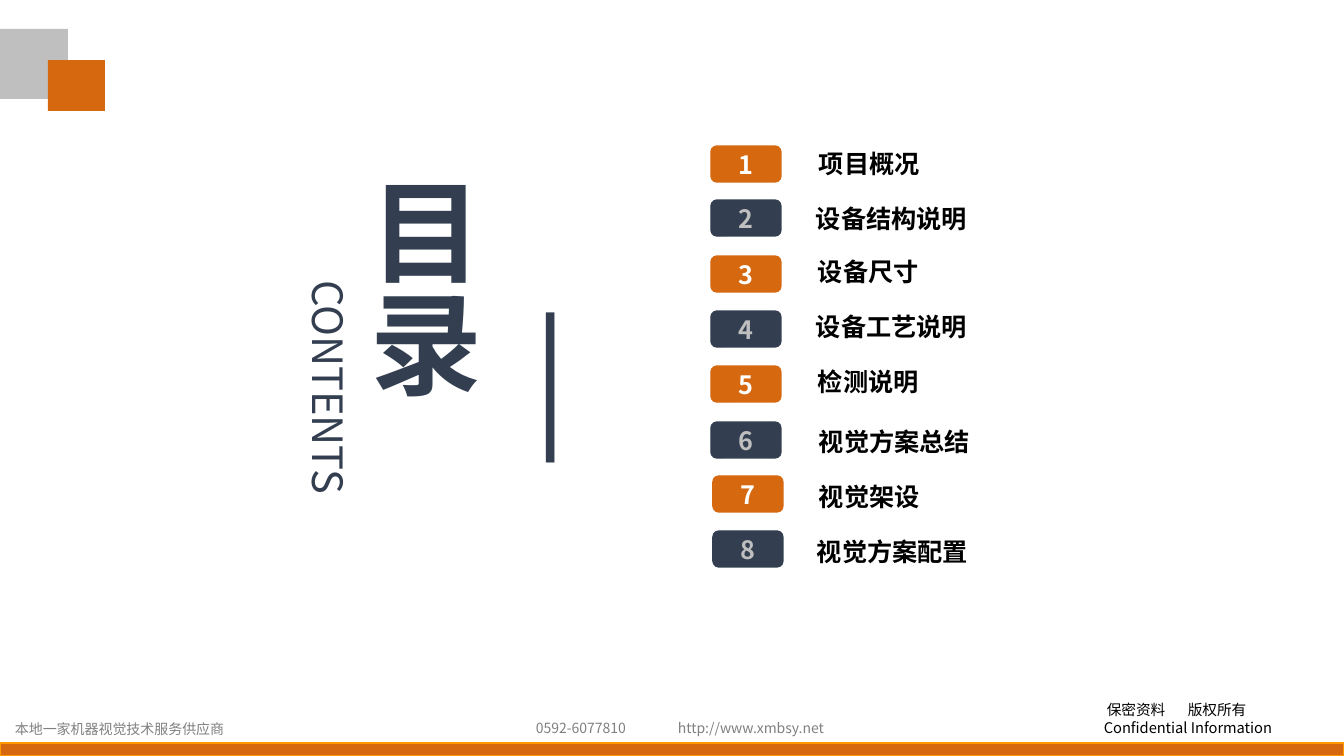
from dataclasses import dataclass

from lxml import etree
from pptx import Presentation
from pptx import util as u
from pptx.dml.color import RGBColor
from pptx.enum import shapes, text
from pptx.oxml.ns import qn

FONT = "Noto Sans CJK SC"
ORANGE, NAVY, SILVER = "D6680F", "333F50", "BFBFBF"
GREY, AMBER, WHITE, BLACK = "808080", "FF9900", "FFFFFF", "000000"
PX_PER_INCH = 100.8
BADGE_WIDTH, BADGE_HEIGHT = 70, 36


@dataclass
class Block:
    left: int
    top: int
    width: int
    height: int
    fill: str
    line: str = ""


@dataclass
class Caption:
    words: str
    left: int
    top: int
    width: int
    height: int
    size: float
    color: str
    bold: bool = False


@dataclass
class AgendaItem:
    words: str
    badge_left: int
    badge_top: int
    label_left: int
    label_top: int


BLOCKS = [
    Block(0, 743, 1344, 13, ORANGE, AMBER),
    Block(-1, 29, 69, 70, SILVER),
    Block(48, 60, 57, 51, ORANGE),
]

FOOTERS = [
    Caption("http://www.xmbsy.net", 668, 715, 168, 27, 10, GREY),
    Caption("0592-6077810", 526, 715, 111, 27, 10, GREY),
    Caption("本地一家机器视觉技术服务供应商", 5, 716, 237, 27, 10, GREY),
]

AGENDA = [
    AgendaItem("项目概况", 711, 146, 809, 143),
    AgendaItem("设备结构说明", 711, 200, 806, 198),
    AgendaItem("设备尺寸", 711, 256, 808, 251),
    AgendaItem("设备工艺说明", 711, 311, 806, 306),
    AgendaItem("检测说明", 711, 366, 808, 361),
    AgendaItem("视觉方案总结", 711, 422, 809, 421),
    AgendaItem("视觉架设", 713, 476, 809, 476),
    AgendaItem("视觉方案配置", 713, 531, 807, 531),
]


def px(length: int) -> u.Emu:
    return u.Emu(round(length * 914400 / PX_PER_INCH))


def rgb(value: str) -> RGBColor:
    return RGBColor.from_string(value)


def format_runs(text_frame, size: float, color: str, bold: bool = False) -> None:
    for paragraph in text_frame.paragraphs:
        for run in paragraph.runs:
            run.font.size = u.Pt(size)
            run.font.bold = bold
            run.font.color.rgb = rgb(color)
            run.font.name = FONT
            east_asian = etree.SubElement(run.font._element, qn("a:ea"))
            east_asian.set("typeface", FONT)


def clear_margins(text_frame) -> None:
    text_frame.margin_left = text_frame.margin_right = 0
    text_frame.margin_top = text_frame.margin_bottom = 0


def add_block(slide, block: Block, kind=shapes.MSO_SHAPE.RECTANGLE):
    shape = slide.shapes.add_shape(
        kind, px(block.left), px(block.top), px(block.width), px(block.height))
    shape.shadow.inherit = False
    shape.fill.solid()
    shape.fill.fore_color.rgb = rgb(block.fill)
    if block.line:
        shape.line.color.rgb = rgb(block.line)
        shape.line.width = u.Pt(1)
    else:
        shape.line.fill.background()
    return shape


def add_caption(slide, caption: Caption):
    shape = slide.shapes.add_textbox(
        px(caption.left), px(caption.top), px(caption.width), px(caption.height))
    shape.text_frame.word_wrap = True
    shape.text_frame.text = caption.words
    format_runs(shape.text_frame, caption.size, caption.color, caption.bold)
    return shape


def add_heading(slide) -> None:
    # Vertical title
    title = slide.shapes.title
    title.left, title.top, title.width, title.height = px(355), px(176), px(135), px(395)
    frame = title.text_frame
    frame.text = "目录"
    frame.auto_size = text.MSO_AUTO_SIZE.NONE
    frame.vertical_anchor = text.MSO_ANCHOR.MIDDLE
    clear_margins(frame)
    frame._txBody.bodyPr.set("vert", "eaVert")
    frame.paragraphs[0].alignment = text.PP_ALIGN.LEFT
    format_runs(frame, 80, NAVY, True)

    # Turned subtitle
    subtitle = add_caption(slide, Caption("CONTENTS", 157, 362, 344, 50, 29.8, NAVY))
    subtitle.rotation = 90
    clear_margins(subtitle.text_frame)
    subtitle.text_frame.paragraphs[0].alignment = text.PP_ALIGN.CENTER

    # Upright bar
    bar = add_caption(slide, Caption("|", 523, 286, 51, 173, 96, NAVY))
    bar.text_frame.word_wrap = False
    bar.text_frame.auto_size = text.MSO_AUTO_SIZE.SHAPE_TO_FIT_TEXT


def add_agenda_item(slide, number: int, item: AgendaItem) -> None:
    fill, color = (ORANGE, WHITE) if number % 2 else (NAVY, SILVER)
    badge = add_block(
        slide,
        Block(item.badge_left, item.badge_top, BADGE_WIDTH, BADGE_HEIGHT, fill, fill),
        shapes.MSO_SHAPE.ROUNDED_RECTANGLE)
    frame = badge.text_frame
    frame.text = str(number)
    frame.vertical_anchor = text.MSO_ANCHOR.MIDDLE
    frame.paragraphs[0].alignment = text.PP_ALIGN.CENTER
    format_runs(frame, 18, color, True)
    add_caption(slide, Caption(
        item.words, item.label_left, item.label_top, 202, 40, 18, BLACK, True))


def add_confidential_note(slide) -> None:
    note = add_caption(slide, Caption(
        "保密资料\t版权所有\nConfidential Information", 1094, 696, 219, 45, 10.5, BLACK))
    properties = note.text_frame.paragraphs[0]._p.get_or_add_pPr()
    properties.set("marL", str(px(3)))
    tabs = etree.SubElement(properties, qn("a:tabLst"))
    etree.SubElement(tabs, qn("a:tab"), pos=str(px(81)), algn="l")


def main() -> None:
    presentation = Presentation()
    presentation.slide_width, presentation.slide_height = px(1344), px(756)
    slide = presentation.slides.add_slide(presentation.slide_layouts[5])

    # Corner squares and bottom band
    for block in BLOCKS:
        add_block(slide, block)

    add_heading(slide)

    # Numbered agenda
    for number, item in enumerate(AGENDA, start=1):
        add_agenda_item(slide, number, item)

    # Footer
    for footer in FOOTERS:
        add_caption(slide, footer)
    add_confidential_note(slide)

    presentation.save("out.pptx")


if __name__ == "__main__":
    main()
